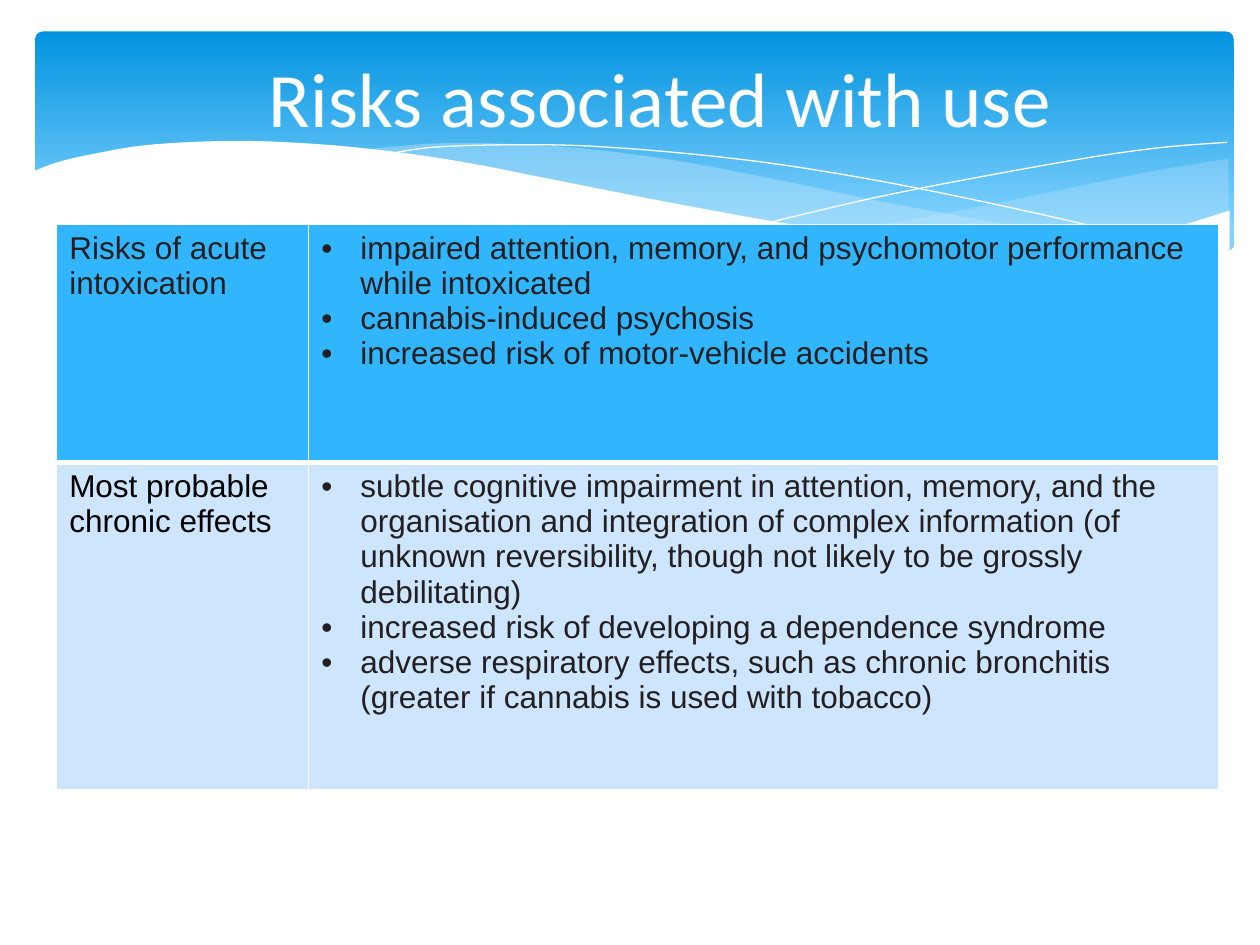
from lxml import etree
from pptx import Presentation
from pptx import util as u
from pptx.dml.color import RGBColor
from pptx.enum import shapes, text
from pptx.oxml import ns


class Theme:
    white, ink, black = "FFFFFF", "231F20", "000000"
    band_top, band_bottom, wave = "0293E0", "83D3FE", "C6E7FC"
    row_dark, row_light = "31B6FD", "CEE5FE"
    title_font, body_font = "Calibri", "Arial"
    title_size, body_size = u.Pt(44), u.Pt(18)


def smooth_points(keys, steps=6):
    """Sample a Catmull-Rom curve through the key points."""
    padded = [keys[0], *keys, keys[-1]]
    points = [keys[0]]
    for a, b, c, d in zip(padded, padded[1:], padded[2:], padded[3:]):
        for step in range(1, steps + 1):
            t = step / steps
            points.append(tuple(
                (2 * q + (r - p) * t + (2 * p - 5 * q + 4 * r - s) * t ** 2
                 + (3 * q - p - 3 * r + s) * t ** 3) / 2
                for p, q, r, s in zip(a, b, c, d)))
    return points


def add_wave(slide, curves, fill=None, opacity=100):
    """Draw joined smooth curves: closed when filled, else a white hairline."""
    points = [(u.Inches(x), u.Inches(y))
              for curve in curves for x, y in smooth_points(curve)]
    builder = slide.shapes.build_freeform(*points[0])
    builder.add_line_segments(points[1:], close=fill is not None)
    wave = builder.convert_to_shape()
    wave.shadow.inherit = False
    if fill is None:
        wave.fill.background()
        wave.line.color.rgb = RGBColor.from_string(Theme.white)
        wave.line.width = u.Pt(0)
        return
    wave.line.fill.background()
    wave.fill.solid()
    wave.fill.fore_color.rgb = RGBColor.from_string(fill)
    if opacity < 100:
        color = wave.element.spPr.find(".//" + ns.qn("a:srgbClr"))
        etree.SubElement(color, ns.qn("a:alpha"), val=str(opacity * 1000))


deck = Presentation()
deck.slide_width, deck.slide_height = u.Inches(10), u.Inches(7.5)
slide = deck.slides.add_slide(deck.slide_layouts[5])

# Header band with waves
band = slide.shapes.add_shape(shapes.MSO_SHAPE.ROUNDED_RECTANGLE, u.Inches(0.28),
                              u.Inches(0.25), u.Inches(9.51), u.Inches(1.74))
band.adjustments[0] = 0.034
band.shadow.inherit = False
band.line.fill.background()
band.fill.gradient()
band.fill.gradient_angle = 270
for stop, color, position in zip(band.fill.gradient_stops,
                                 (Theme.band_top, Theme.band_bottom), (0, 0.9)):
    stop.color.rgb = RGBColor.from_string(color)
    stop.position = position

right_wave = [
    [(9.75, 1.26), (9.2, 1.35), (8.6, 1.47), (7.78, 1.64), (7.05, 1.77), (6.6, 1.83)],
    [(6.6, 1.83), (7.18, 1.9), (7.8, 1.94), (8.34, 1.94), (8.8, 1.9), (9.27, 1.82),
     (9.75, 1.68)],
]
middle_wave = [
    [(8.92, 1.9), (8.06, 1.79), (7.05, 1.61), (6.28, 1.45), (5.4, 1.28), (4.64, 1.18),
     (3.98, 1.14), (3.43, 1.14), (2.86, 1.19)],
    [(2.86, 1.19), (3.61, 1.28), (4.49, 1.45), (5.65, 1.69), (6.64, 1.84), (7.47, 1.93),
     (8.17, 1.95), (8.92, 1.9)],
]
falling_line = [(3.09, 1.22), (3.43, 1.17), (4, 1.15), (4.68, 1.16), (5.56, 1.23),
                (6.35, 1.33), (7.26, 1.49), (8.3, 1.71), (9.06, 1.89)]
rising_line = [(6.13, 1.76), (6.94, 1.57), (7.75, 1.41), (8.65, 1.25), (9.23, 1.17),
               (9.74, 1.13)]
white_wave = [
    [(9.76, 1.67), (9.29, 1.81), (8.74, 1.9), (8.08, 1.94), (7.25, 1.9), (6.47, 1.81),
     (5.54, 1.65), (4.46, 1.44), (3.64, 1.28), (2.92, 1.18), (2.29, 1.13), (1.76, 1.12),
     (1.18, 1.15), (0.75, 1.22), (0.45, 1.29), (0.22, 1.38)],
    [(0.22, 2.4), (9.76, 2.4)],
]
add_wave(slide, right_wave, Theme.wave, 29)
add_wave(slide, middle_wave, Theme.wave, 40)
add_wave(slide, [falling_line])
add_wave(slide, [rising_line])
add_wave(slide, white_wave, Theme.white)

# Title, brought in front of the band
title = slide.shapes.title
title.element.getparent().append(title.element)
title.left, title.top = u.Inches(0.49), u.Inches(0.23)
title.width, title.height = u.Inches(9), u.Inches(1.08)
title.text_frame.text = "Risks associated with use"
title.text_frame.vertical_anchor = text.MSO_ANCHOR.MIDDLE
para = title.text_frame.paragraphs[0]
para.alignment = text.PP_ALIGN.CENTER
properties = para._p.get_or_add_pPr()
properties.set("marL", str(u.Inches(0.5)))
properties.set("indent", "0")
font = para.runs[0].font
font.name, font.size = Theme.title_font, Theme.title_size
font.color.rgb = RGBColor.from_string(Theme.white)

# Risk table: heading lines, bullets, fill, heading colour, top and bottom border
rows = [
    (["Risks of acute", "intoxication"],
     ["impaired attention, memory, and psychomotor performance while intoxicated",
      "cannabis-induced psychosis",
      "increased risk of motor-vehicle accidents"],
     Theme.row_dark, Theme.ink, 1, 3),
    (["Most probable", "chronic effects"],
     ["subtle cognitive impairment in attention, memory, and the organisation and "
      "integration of complex information (of unknown reversibility, though not "
      "likely to be grossly debilitating)",
      "increased risk of developing a dependence syndrome",
      "adverse respiratory effects, such as chronic bronchitis (greater if cannabis "
      "is used with tobacco)"],
     Theme.row_light, Theme.black, 3, 1),
]
table = slide.shapes.add_table(len(rows), 2, u.Inches(0.45), u.Inches(1.78),
                               u.Inches(9.22), u.Inches(4.49)).table
table.first_row = table.horz_banding = False
for column, width in zip(table.columns, (2, 7.22)):
    column.width = u.Inches(width)
for row, height in zip(table.rows, (1.89, 2.6)):
    row.height = u.Inches(height)

for row, (heading, bullets, fill, heading_color, top, bottom) in zip(table.rows, rows):
    contents = ((heading, heading_color, False), (bullets, Theme.ink, True))
    for cell, (lines, color, bulleted) in zip(row.cells, contents):
        cell.fill.solid()
        cell.fill.fore_color.rgb = RGBColor.from_string(fill)
        cell_properties = cell._tc.get_or_add_tcPr()
        borders = (("lnL", 1), ("lnR", 1), ("lnT", top), ("lnB", bottom))
        for index, (side, points) in enumerate(borders):
            border = etree.Element(ns.qn("a:" + side), w=str(u.Pt(points)))
            solid = etree.SubElement(border, ns.qn("a:solidFill"))
            etree.SubElement(solid, ns.qn("a:srgbClr"), val=Theme.white)
            cell_properties.insert(index, border)
        cell.text_frame.text = "\n".join(lines)
        for para in cell.text_frame.paragraphs:
            if bulleted:
                properties = para._p.get_or_add_pPr()
                properties.set("marL", str(u.Inches(0.31)))
                properties.set("indent", str(-u.Inches(0.31)))
                etree.SubElement(properties, ns.qn("a:buFont"), typeface=Theme.body_font)
                etree.SubElement(properties, ns.qn("a:buChar"), char="•")
            span = para.runs[0]
            span.font.name, span.font.size = Theme.body_font, Theme.body_size
            span.font.color.rgb = RGBColor.from_string(color)

deck.save("out.pptx")
